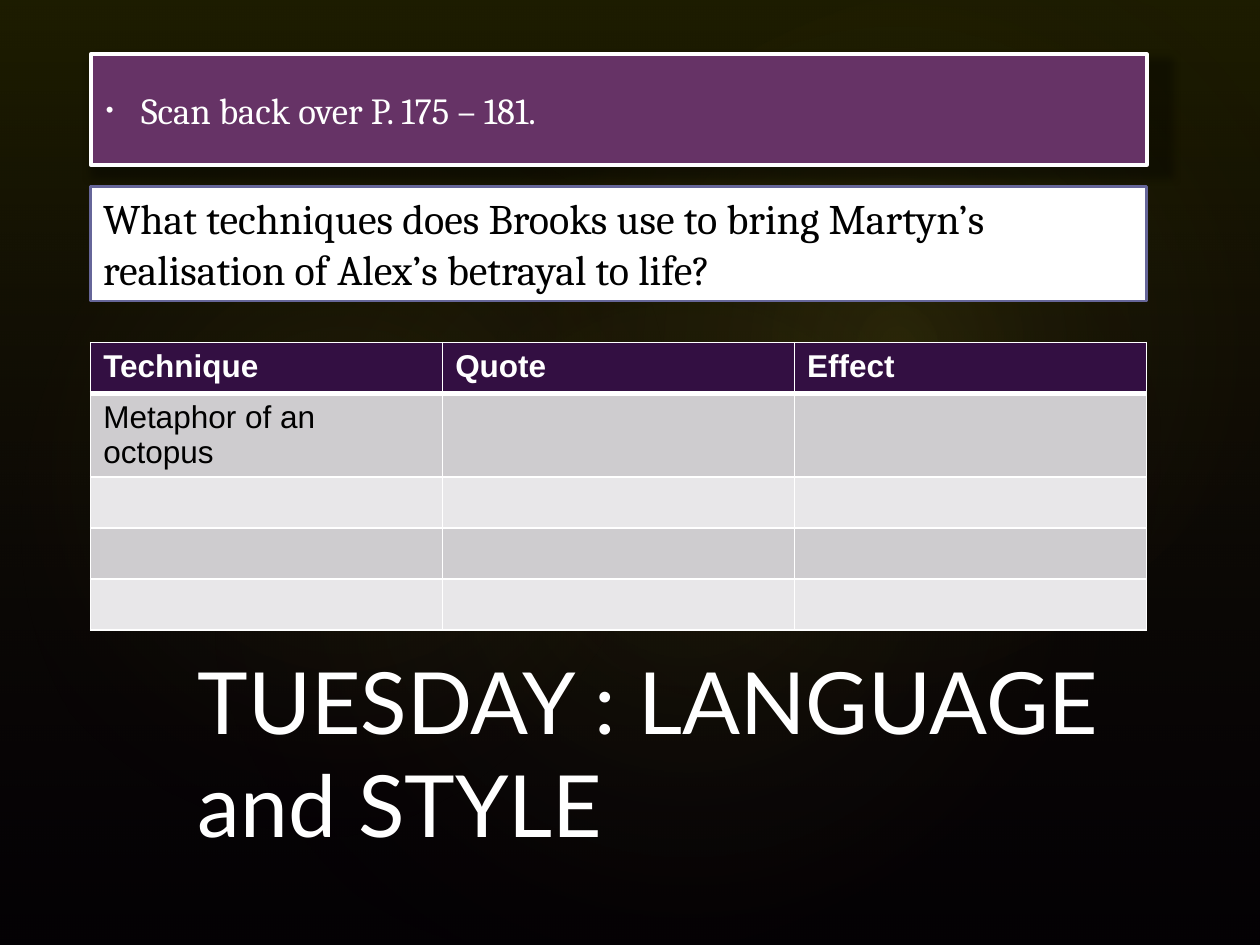
from dataclasses import dataclass

from lxml import etree
from pptx import Presentation
from pptx import util as u
from pptx.dml.color import RGBColor
from pptx.enum import shapes, text
from pptx.oxml import parse_xml
from pptx.oxml.ns import nsdecls, qn

COLORS = {
    "black": "000000", "white": "FFFFFF", "purple": "663366", "slate": "666699",
    "header": "330F42", "band_dark": "CECCCF", "band_light": "E8E7E9",
    "olive": "525000", "plum": "2B142D", "yellow": "FEFB31",
}
LEFT, WIDTH = 0.72, 8.38
ROWS = [["Technique", "Quote", "Effect"], ["Metaphor of an octopus", "", ""]] + [[""] * 3] * 3


@dataclass
class Glow:
    box: tuple[float, float, float, float]
    alpha: int
    rotation: float


GLOWS = [
    Glow((1.5, 1.14, 7.92, 6.24), 7, 328.7),
    Glow((-0.3, 1.28, 6.06, 4.9), 8, 294.3),
    Glow((3.58, 0.13, 7.09, 5.2), 8, 328.7),
]
LINEAR = '<a:lin ang="5400000" scaled="0"/>'
RADIAL = '<a:path path="circle"><a:fillToRect l="50000" t="50000" r="50000" b="50000"/></a:path>'


def rgb(name: str) -> RGBColor:
    return RGBColor.from_string(COLORS[name])


def place(sp, x: float, y: float, w: float, h: float) -> None:
    sp.left, sp.top, sp.width, sp.height = map(u.Inches, (x, y, w, h))


def style_box(sp, fill: str, line: str, width: float) -> None:
    sp.fill.solid()
    sp.fill.fore_color.rgb = rgb(fill)
    sp.line.color.rgb = rgb(line)
    sp.line.width = u.Pt(width)


def write(tf, content: str, *, size: float, font: str, color: str = "white",
          bold: bool = False, anchor=text.MSO_ANCHOR.TOP):
    tf.word_wrap = True
    tf.auto_size = text.MSO_AUTO_SIZE.NONE
    tf.vertical_anchor = anchor
    p = tf.paragraphs[0]
    p.alignment = text.PP_ALIGN.LEFT
    r = p.add_run()
    r.text = content
    r.font.size, r.font.name, r.font.bold = u.Pt(size), font, bold
    r.font.color.rgb = rgb(color)
    return p


def add_gradient(s, index: int, kind, box: tuple, stops: list, direction: str,
                 rotation: float = 0) -> None:
    sp = s.shapes.add_shape(kind, *map(u.Inches, box))
    sp.rotation = rotation
    sp.shadow.inherit = False
    sp.line.fill.background()
    gs = "".join(
        f'<a:gs pos="{pos * 1000}"><a:srgbClr val="{COLORS[color]}">'
        f'<a:alpha val="{alpha * 1000}"/></a:srgbClr></a:gs>'
        for pos, color, alpha in stops)
    geometry = sp._element.spPr.find(qn("a:prstGeom"))
    geometry.addnext(parse_xml(
        f'<a:gradFill {nsdecls("a")} rotWithShape="1"><a:gsLst>{gs}</a:gsLst>{direction}</a:gradFill>'))
    s.shapes._spTree.insert(2 + index, sp._element)


def add_backdrop(s) -> None:
    s.background.fill.solid()
    s.background.fill.fore_color.rgb = rgb("black")
    add_gradient(s, 0, shapes.MSO_SHAPE.RECTANGLE, (0, 0, 10, 7.5),
                 [(0, "olive", 36), (100, "plum", 10)], LINEAR)
    for i, glow in enumerate(GLOWS, 1):
        add_gradient(s, i, shapes.MSO_SHAPE.OVAL, glow.box,
                     [(0, "yellow", glow.alpha), (58, "plum", 0)], RADIAL, glow.rotation)


def add_task(sp) -> None:
    place(sp, LEFT, 0.43, WIDTH, 0.88)
    style_box(sp, "purple", "white", 2.25)
    sp._element.spPr.append(parse_xml(
        f'<a:effectLst {nsdecls("a")}><a:outerShdw blurRad="63500" dist="12700" dir="5400000" '
        'sx="102000" sy="105000" algn="tl" rotWithShape="0"><a:srgbClr val="000000">'
        '<a:alpha val="32000"/></a:srgbClr></a:outerShdw></a:effectLst>'))
    p = write(sp.text_frame, "Scan back over P. 175 – 181.", size=21, font="Cambria",
              anchor=text.MSO_ANCHOR.MIDDLE)
    pPr = p._p.get_or_add_pPr()
    pPr.set("marL", str(u.Inches(0.3)))
    pPr.set("indent", str(u.Inches(-0.28)))
    etree.SubElement(pPr, qn("a:buSzPct")).set("val", "60000")
    etree.SubElement(pPr, qn("a:buChar")).set("char", "•")


def add_question(s) -> None:
    sp = s.shapes.add_textbox(0, 0, 0, 0)
    place(sp, LEFT, 1.48, WIDTH, 0.91)
    style_box(sp, "white", "slate", 1.5)
    write(sp.text_frame,
          "What techniques does Brooks use to bring Martyn’s realisation of Alex’s betrayal to life?",
          size=24, font="Cambria", color="black")


def set_borders(cell, header: bool) -> None:
    tcPr = cell._tc.get_or_add_tcPr()
    for i, side in enumerate("LRTB"):
        width = 3 if header and side == "B" else 1
        tcPr.insert(i, parse_xml(
            f'<a:ln{side} {nsdecls("a")} w="{u.Pt(width)}"><a:solidFill>'
            f'<a:srgbClr val="{COLORS["white"]}"/></a:solidFill></a:ln{side}>'))


def add_technique_table(s) -> None:
    frame = s.shapes.add_table(len(ROWS), len(ROWS[0]), u.Inches(LEFT), u.Inches(2.72),
                               u.Inches(WIDTH), u.Inches(0.405 * len(ROWS)))
    for i, row in enumerate(ROWS):
        header = i == 0
        fill = "header" if header else "band_dark" if i % 2 else "band_light"
        for j, content in enumerate(row):
            cell = frame.table.cell(i, j)
            cell.fill.solid()
            cell.fill.fore_color.rgb = rgb(fill)
            set_borders(cell, header)
            if content:
                write(cell.text_frame, content, size=18, font="Arial",
                      color="white" if header else "black", bold=header)


def main() -> None:
    prs = Presentation()
    prs.slide_width, prs.slide_height = u.Inches(10), u.Inches(7.5)
    s = prs.slides.add_slide(prs.slide_layouts[1])
    add_backdrop(s)
    add_task(s.placeholders[1])
    title = s.shapes.title
    place(title, 1.47, 5.83, 8.25, 1)
    write(title.text_frame, "TUESDAY : LANGUAGE and STYLE", size=49, font="Lato",
          anchor=text.MSO_ANCHOR.BOTTOM)
    add_question(s)
    add_technique_table(s)
    prs.save("out.pptx")


if __name__ == "__main__":
    main()
